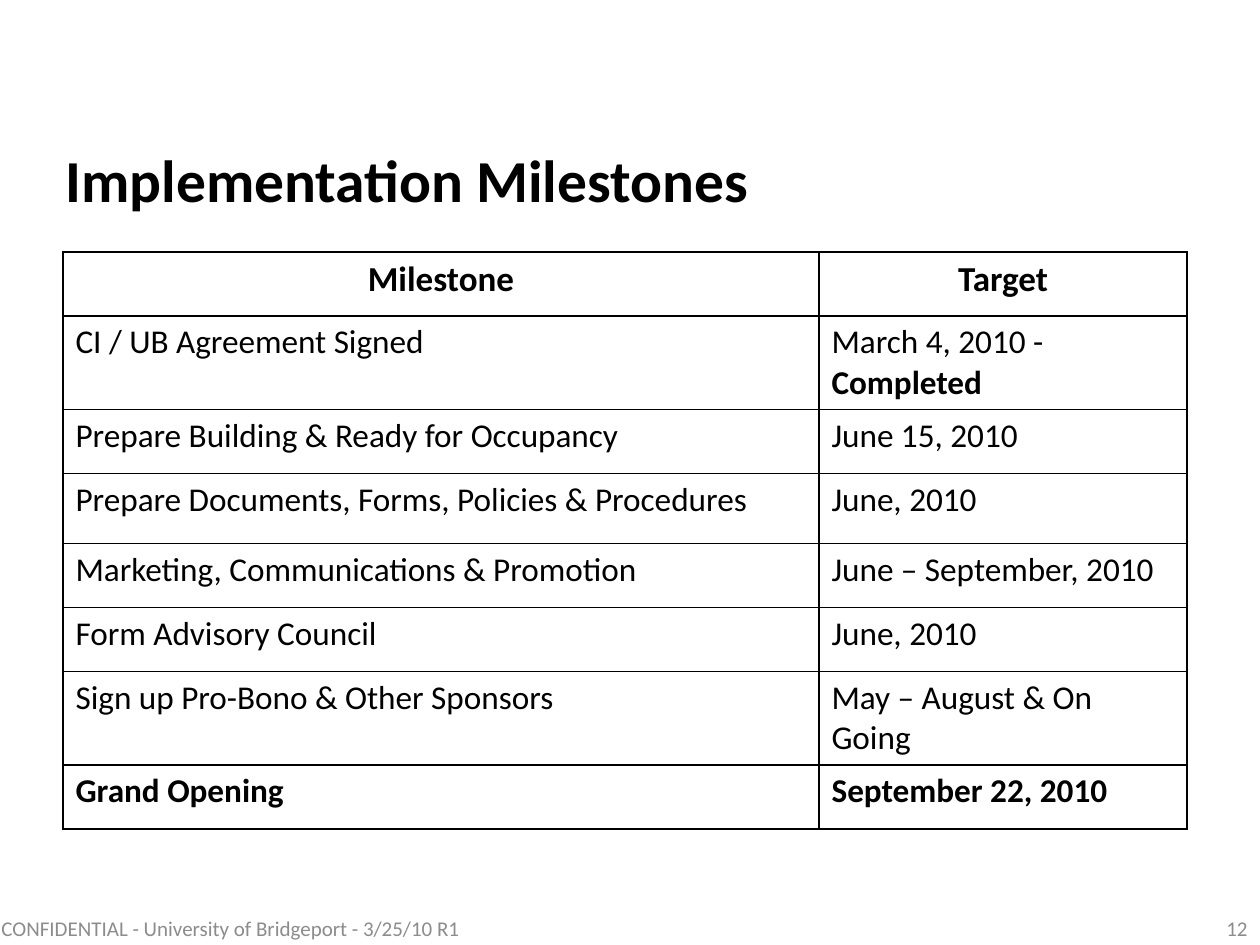
"""Build the implementation milestones slide."""
from lxml import etree
from pptx import Presentation, util as u
from pptx.dml.color import RGBColor
from pptx.enum import text as t
from pptx.oxml import ns

TITLE = "Implementation Milestones"
HEADER = ("Milestone", "Target")
MILESTONES = [
    ("CI / UB Agreement Signed", "March 4, 2010 - ", "Completed"),
    ("Prepare Building & Ready for Occupancy", "June 15, 2010"),
    ("Prepare Documents, Forms, Policies & Procedures", "June, 2010"),
    ("Marketing, Communications & Promotion", "June – September, 2010"),
    ("Form Advisory Council", "June, 2010"),
    ("Sign up Pro-Bono & Other Sponsors", "May – August & On Going"),
]
OPENING = ("Grand Opening", "September 22, 2010")
CONFIDENTIALITY = "CONFIDENTIAL - University of Bridgeport - 3/25/10 R1"
PAGE = "12"

THEME = {
    "font": "Calibri", "ink": "000000", "muted": "8C8C8C",
    "title": 34, "header": 20, "body": 19, "footer": 12, "rule": 1,
}
COLUMN_WIDTHS = (15.24, 7.42)
ROW_HEIGHT, TALL_ROW, TALL_HEIGHT = 1.29, 3, 1.42
FOOTER_TOP, FOOTER_HEIGHT = 18.21, 1.02


def write(frame, words, size="body", color="ink", bold=False,
          align=t.PP_ALIGN.LEFT, anchor=t.MSO_ANCHOR.TOP, bold_tail=""):
    """Write one formatted paragraph, with an optional bold ending."""
    frame.word_wrap = True
    frame.vertical_anchor = anchor
    paragraph = frame.paragraphs[0]
    paragraph.alignment = align
    for part, heavy in ((words, bold), (bold_tail, True)):
        if part:
            run = paragraph.add_run()
            run.text = part
            run.font.name = THEME["font"]
            run.font.size = u.Pt(THEME[size])
            run.font.bold = heavy
            run.font.color.rgb = RGBColor.from_string(THEME[color])


def rule_cell(cell):
    """Give a cell solid rules on all sides and no fill."""
    properties = cell._tc.get_or_add_tcPr()
    for side in ("a:lnL", "a:lnR", "a:lnT", "a:lnB"):
        line = etree.SubElement(properties, ns.qn(side), w=str(u.Pt(THEME["rule"])))
        fill = etree.SubElement(line, ns.qn("a:solidFill"))
        etree.SubElement(fill, ns.qn("a:srgbClr"), val=THEME["ink"])
    cell.fill.background()


def add_title(slide):
    """Place the slide title."""
    title = slide.shapes.title
    title.left, title.top = u.Cm(1.07), u.Cm(2.54)
    title.width, title.height = u.Cm(22.86), u.Cm(2.11)
    write(title.text_frame, TITLE, size="title", bold=True, anchor=t.MSO_ANCHOR.MIDDLE)


def add_milestones(slide):
    """Lay out the milestone table."""
    rows = [HEADER, *MILESTONES, OPENING]
    heights = [TALL_HEIGHT if i == TALL_ROW else ROW_HEIGHT for i in range(len(rows))]
    table = slide.shapes.add_table(
        len(rows), len(HEADER), u.Cm(1.27), u.Cm(5.08),
        u.Cm(sum(COLUMN_WIDTHS)), u.Cm(sum(heights))).table
    table.first_row = table.horz_banding = False
    for column, width in zip(table.columns, COLUMN_WIDTHS):
        column.width = u.Cm(width)
    for row, height, (milestone, target, *status) in zip(table.rows, heights, rows):
        row.height = u.Cm(height)
        is_header = milestone == HEADER[0]
        look = {
            "size": "header" if is_header else "body",
            "bold": is_header or milestone == OPENING[0],
            "align": t.PP_ALIGN.CENTER if is_header else t.PP_ALIGN.LEFT,
        }
        milestone_cell, target_cell = row.cells
        write(milestone_cell.text_frame, milestone, **look)
        write(target_cell.text_frame, target, bold_tail="".join(status), **look)
        for cell in (milestone_cell, target_cell):
            rule_cell(cell)


def add_footer(slide):
    """Add the confidentiality note and the page number."""
    for words, left, width, align in (
        (CONFIDENTIALITY, -1.7, 12.7, t.PP_ALIGN.CENTER),
        (PAGE, 19.48, 5.92, t.PP_ALIGN.RIGHT),
    ):
        note = slide.shapes.add_textbox(
            u.Cm(left), u.Cm(FOOTER_TOP), u.Cm(width), u.Cm(FOOTER_HEIGHT))
        write(note.text_frame, words, size="footer", color="muted",
              align=align, anchor=t.MSO_ANCHOR.MIDDLE)


def main():
    """Assemble and save the slide."""
    deck = Presentation()
    deck.slide_width, deck.slide_height = u.Cm(25.4), u.Cm(19.05)
    slide = deck.slides.add_slide(deck.slide_layouts.get_by_name("Title Only"))
    add_title(slide)
    add_milestones(slide)
    add_footer(slide)
    deck.save("out.pptx")


if __name__ == "__main__":
    main()
